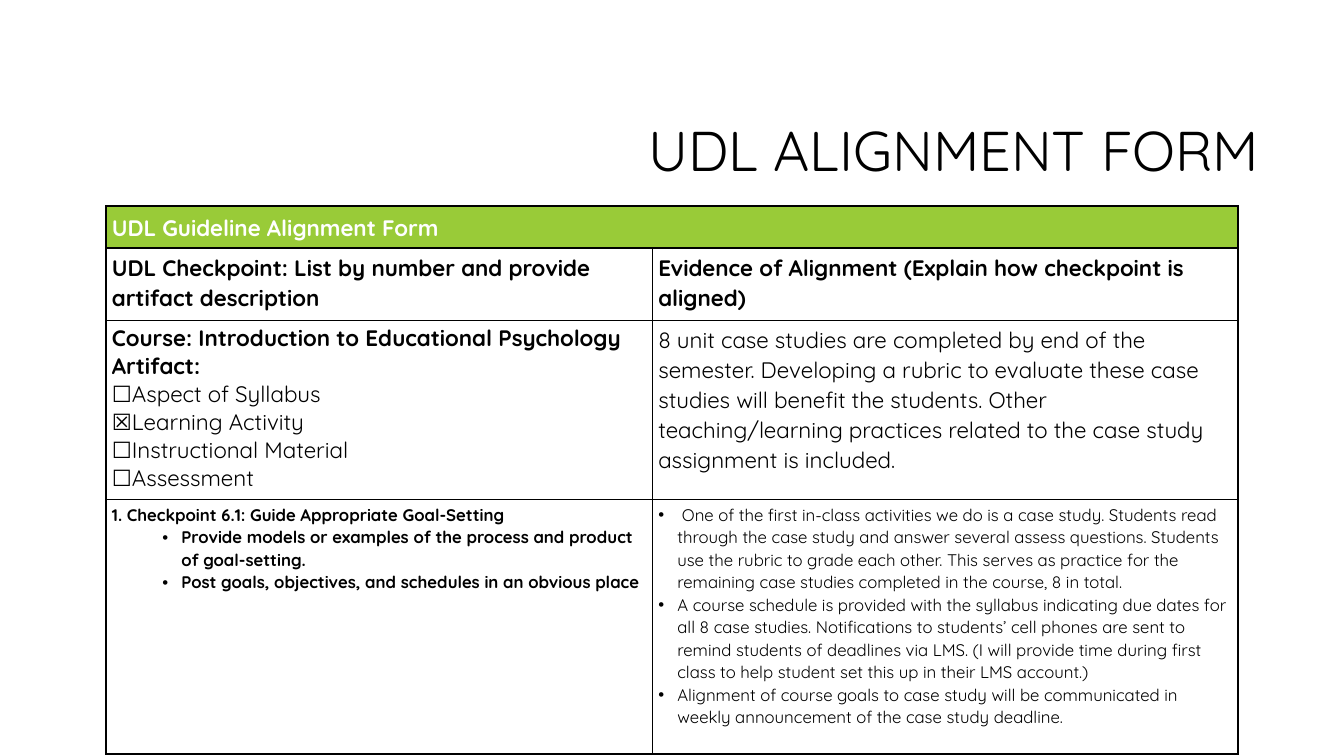
from lxml.etree import SubElement
from pptx import Presentation
from pptx.dml.color import RGBColor
from pptx.enum.text import MSO_ANCHOR, MSO_AUTO_SIZE, PP_ALIGN
from pptx.oxml.ns import qn
from pptx.util import Cm, Pt

FONT = "Quicksand"
HUES = {"ink": "000000", "paper": "FFFFFF", "green": "99CB38"}
COLS = [13.77, 14.76]
ROWS = [1.06, 1.83, 4.5, 6.42]

HEAD = "UDL Guideline Alignment Form"
LABELS = [
    "UDL Checkpoint: List by number and provide artifact description",
    "Evidence of Alignment (Explain how checkpoint is aligned)",
]
COURSE = ["Course: Introduction to Educational Psychology", "Artifact:"]
KINDS = [
    "☐Aspect of Syllabus",
    "☒Learning Activity",
    "☐Instructional Material",
    "☐Assessment",
]
CASES = (
    "8 unit case studies are completed by end of the semester. Developing a "
    "rubric to evaluate these case studies will benefit the students. Other "
    "teaching/learning practices related to the case study assignment is included."
)
CHECK = "1. Checkpoint 6.1: Guide Appropriate Goal-Setting"
GOALS = [
    "Provide models or examples of the process and product of goal-setting.",
    "Post goals, objectives, and schedules in an obvious place",
]
PROOFS = [
    " One of the first in-class activities we do is a case study. Students read "
    "through the case study and answer several assess questions. Students use the "
    "rubric to grade each other. This serves as practice for the remaining case "
    "studies completed in the course, 8 in total.",
    "A course schedule is provided with the syllabus indicating due dates for all "
    "8 case studies. Notifications to students’ cell phones are sent to remind "
    "students of deadlines via LMS. (I will provide time during first class to help "
    "student set this up in their LMS account.)",
    "Alignment of course goals to case study will be communicated in weekly "
    "announcement of the case study deadline.",
]


def color(name):
    """Return the named colour."""
    return RGBColor.from_string(HUES[name])


def style(para, size, bold=False, hue="ink"):
    """Set the font of a whole paragraph."""
    font = para.font
    font.name, font.size, font.bold = FONT, Pt(size), bold
    font.color.rgb = color(hue)


def bullet(para, left):
    """Give a paragraph a hanging bullet."""
    props = para._p.get_or_add_pPr()
    props.set("marL", str(Cm(left)))
    props.set("indent", str(-Cm(0.48)))
    SubElement(props, qn("a:buFont")).set("typeface", "Arial")
    SubElement(props, qn("a:buChar")).set("char", "•")


def write(cell, lines, size=16, bold=False, hue="ink", space=1.07, left=None, level=0):
    """Add lines of one style to a cell."""
    frame = cell.text_frame
    for line in lines:
        para = frame.paragraphs[0] if not frame.text else frame.add_paragraph()
        para.text = line
        para.level = level
        if left is not None:
            bullet(para, left)
        para.line_spacing = space
        style(para, size, bold, hue)


def border(cell):
    """Draw a thin line on all sides of a cell."""
    props = cell._tc.get_or_add_tcPr()
    for place, side in enumerate(("lnL", "lnR", "lnT", "lnB")):
        line = SubElement(props, qn("a:" + side), w=str(Pt(1)))
        fill = SubElement(line, qn("a:solidFill"))
        SubElement(fill, qn("a:srgbClr"), val=HUES["ink"])
        props.insert(place, line)


def title(slide, left, top, width, height):
    """Place and format the slide title."""
    shape = slide.shapes.title
    shape.left, shape.top, shape.width, shape.height = map(Cm, (left, top, width, height))
    frame = shape.text_frame
    frame.text = "UDL ALIGNMENT FORM"
    frame.word_wrap = True
    frame.auto_size = MSO_AUTO_SIZE.NONE
    frame.vertical_anchor = MSO_ANCHOR.MIDDLE
    para = frame.paragraphs[0]
    para.alignment = PP_ALIGN.RIGHT
    para.line_spacing = 0.9
    style(para, 40)


def form(slide, left, top):
    """Build the alignment table."""
    box = map(Cm, (left, top, sum(COLS), sum(ROWS)))
    table = slide.shapes.add_table(len(ROWS), len(COLS), *box).table
    table.first_row = table.horz_banding = False
    for col, width in zip(table.columns, COLS):
        col.width = Cm(width)
    for row, height in zip(table.rows, ROWS):
        row.height = Cm(height)
    for cell in table.iter_cells():
        cell.margin_left, cell.margin_right = Cm(0.15), Cm(0.08)
        cell.margin_top = cell.margin_bottom = Cm(0.1)
        cell.fill.solid()
        cell.fill.fore_color.rgb = color("paper")
        border(cell)

    head = table.cell(0, 0)
    head.merge(table.cell(0, 1))
    head.fill.fore_color.rgb = color("green")
    head.vertical_anchor = MSO_ANCHOR.MIDDLE
    write(head, [HEAD], bold=True, hue="paper")
    for col, label in enumerate(LABELS):
        write(table.cell(1, col), [label], bold=True)
    write(table.cell(2, 0), COURSE, bold=True, space=1.0)
    write(table.cell(2, 0), KINDS, space=1.0)
    write(table.cell(2, 1), [CASES])
    write(table.cell(3, 0), [CHECK], 12, True)
    write(table.cell(3, 0), GOALS, 12, True, left=1.75, level=1)
    write(table.cell(3, 1), PROOFS, 12, left=0.48)


def main():
    """Build and save the slide."""
    deck = Presentation()
    deck.slide_width, deck.slide_height = Cm(33.87), Cm(19.05)
    slide = deck.slides.add_slide(deck.slide_layouts[5])
    title(slide, 8.05, 2.08, 23.93, 3.58)
    form(slide, 2.67, 5.19)
    deck.save("out.pptx")


if __name__ == "__main__":
    main()
